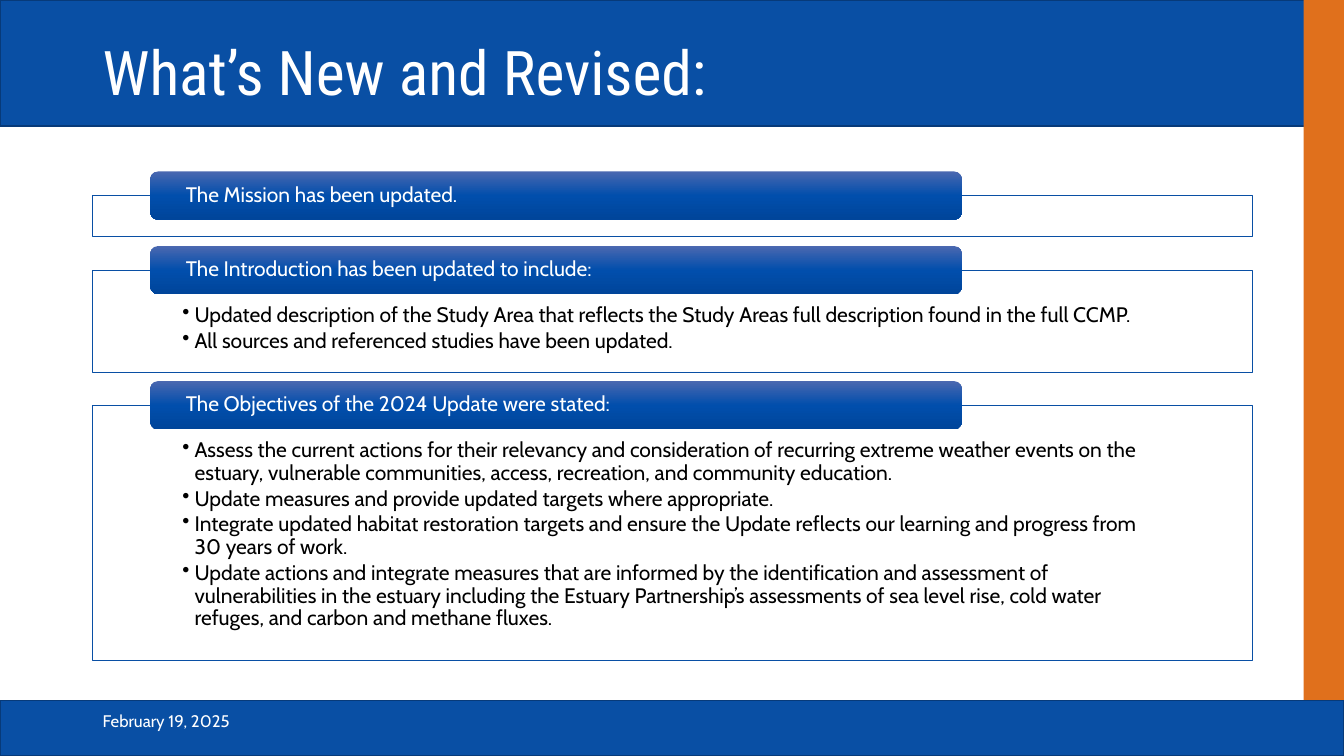
from copy import deepcopy
from dataclasses import dataclass

from lxml import etree
from pptx import Presentation
from pptx import util as u
from pptx.dml.color import RGBColor
from pptx.enum import shapes, text
from pptx.oxml import ns


@dataclass(frozen=True)
class Theme:
    blue: str = "094FA4"
    blue_edge: str = "073A79"
    orange: str = "E0701C"
    white: str = "FFFFFF"
    black: str = "000000"
    tab_gradient: tuple = ((0, "4B68B0"), (0.5, "014EAC"), (1, "00459A"))
    title_font: str = "Roboto Condensed"
    body_font: str = "Cabin"
    title_size: float = 44
    body_size: float = 15
    date_size: float = 12


class SlideBuilder:
    def __init__(self, slide, theme):
        self.slide = slide
        self.theme = theme

    def box(self, kind, left, top, width, height, fill=None, line=None, weight=1):
        shape = self.slide.shapes.add_shape(
            kind, *map(u.Inches, (left, top, width, height)))
        shape.shadow.inherit = False
        if fill:
            shape.fill.solid()
            shape.fill.fore_color.rgb = RGBColor.from_string(fill)
        if line:
            shape.line.color.rgb = RGBColor.from_string(line)
            shape.line.width = u.Pt(weight)
        else:
            shape.line.fill.background()
        return shape

    def band(self, left, top, width, height, fill, line=None):
        self.box(shapes.MSO_SHAPE.RECTANGLE, left, top, width, height, fill, line)

    def add_text(self, shape, lines, size, color, font=None,
                 insets=(0.1, 0.05, 0.1, 0.05), anchor=text.MSO_ANCHOR.MIDDLE,
                 spacing=0.9, after=0, bullets=False):
        frame = shape.text_frame
        frame.word_wrap = True
        frame.vertical_anchor = anchor
        (frame.margin_left, frame.margin_top,
         frame.margin_right, frame.margin_bottom) = map(u.Inches, insets)
        for index, line in enumerate(lines):
            paragraph = frame.add_paragraph() if index else frame.paragraphs[0]
            paragraph.alignment = text.PP_ALIGN.LEFT
            paragraph.line_spacing = spacing
            paragraph.space_after = u.Pt(after)
            if bullets:
                self.bullet(paragraph)
            run = paragraph.add_run()
            run.text = line
            run.font.name = font or self.theme.body_font
            run.font.size = u.Pt(size)
            run.font.color.rgb = RGBColor.from_string(color)

    def bullet(self, paragraph, indent=0.12):
        properties = paragraph._p.get_or_add_pPr()
        properties.set("marL", str(u.Inches(indent)))
        properties.set("indent", str(-u.Inches(indent)))
        etree.SubElement(properties, ns.qn("a:buChar")).set("char", "•")

    def label(self, left, top, width, height, wording, size, **style):
        textbox = self.slide.shapes.add_textbox(
            *map(u.Inches, (left, top, width, height)))
        self.add_text(textbox, [wording], size, self.theme.white, **style)

    def panel(self, top, height, points):
        frame = self.box(shapes.MSO_SHAPE.RECTANGLE, 0.92, top, 11.5, height,
                         self.theme.white, self.theme.blue, 0.5)
        if points:
            self.add_text(frame, points, self.theme.body_size, self.theme.black,
                          insets=(0.89, 0.34, 0.89, 0.12),
                          anchor=text.MSO_ANCHOR.TOP, after=2.25, bullets=True)

    def tab(self, top, heading):
        tab = self.box(shapes.MSO_SHAPE.ROUNDED_RECTANGLE, 1.49, top, 8.05, 0.48)
        tab.fill.gradient()
        tab.fill.gradient_angle = 270
        # A new gradient has two stops; add the middle one
        stop_list = tab._element.spPr.find(".//" + ns.qn("a:gsLst"))
        stop_list.append(deepcopy(stop_list[0]))
        for stop, (position, color) in zip(tab.fill.gradient_stops,
                                           self.theme.tab_gradient):
            stop.position = position
            stop.color.rgb = RGBColor.from_string(color)
        self.add_text(tab, [heading], self.theme.body_size, self.theme.white,
                      insets=(0.33, 0, 0.33, 0), after=5.25)


# Heading, panel height and bullet points
SECTIONS = [
    ("The Mission has been updated.", 0.41, []),
    ("The Introduction has been updated to include:", 1.01, [
        "Updated description of the Study Area that reflects the Study Areas full "
        "description found in the full CCMP.",
        "All sources and referenced studies have been updated.",
    ]),
    ("The Objectives of the 2024 Update were stated:", 2.53, [
        "Assess the current actions for their relevancy and consideration of recurring "
        "extreme weather events on the estuary, vulnerable communities, access, "
        "recreation, and community education.",
        "Update measures and provide updated targets where appropriate.",
        "Integrate updated habitat restoration targets and ensure the Update reflects "
        "our learning and progress from 30 years of work.",
        "Update actions and integrate measures that are informed by the identification "
        "and assessment of vulnerabilities in the estuary including the Estuary "
        "Partnership’s assessments of sea level rise, cold water refuges, and carbon "
        "and methane fluxes.",
    ]),
]
FIRST_TOP, PANEL_GAP, TAB_RISE = 1.94, 0.33, 0.24


def main():
    deck = Presentation()
    deck.slide_width, deck.slide_height = u.Inches(13.33), u.Inches(7.5)
    theme = Theme()
    page = SlideBuilder(deck.slides.add_slide(deck.slide_layouts[6]), theme)

    # Header, side and footer bands
    page.band(0, 0, 13.33, 1.25, theme.blue, theme.blue_edge)
    page.band(12.93, 0, 0.4, 7.36, theme.orange)
    page.band(0, 6.95, 13.33, 0.55, theme.blue, theme.blue_edge)

    # Title and date
    page.label(0.92, 0.24, 11.5, 1.01, "What’s New and Revised:",
               theme.title_size, font=theme.title_font)
    page.label(0.92, 6.95, 3, 0.4, "February 19, 2025", theme.date_size,
               spacing=1.0, after=6)

    # Stacked sections, each tab overlapping the top of its panel
    top = FIRST_TOP
    for heading, height, points in SECTIONS:
        page.panel(top, height, points)
        page.tab(top - TAB_RISE, heading)
        top += height + PANEL_GAP

    deck.save("out.pptx")


if __name__ == "__main__":
    main()
